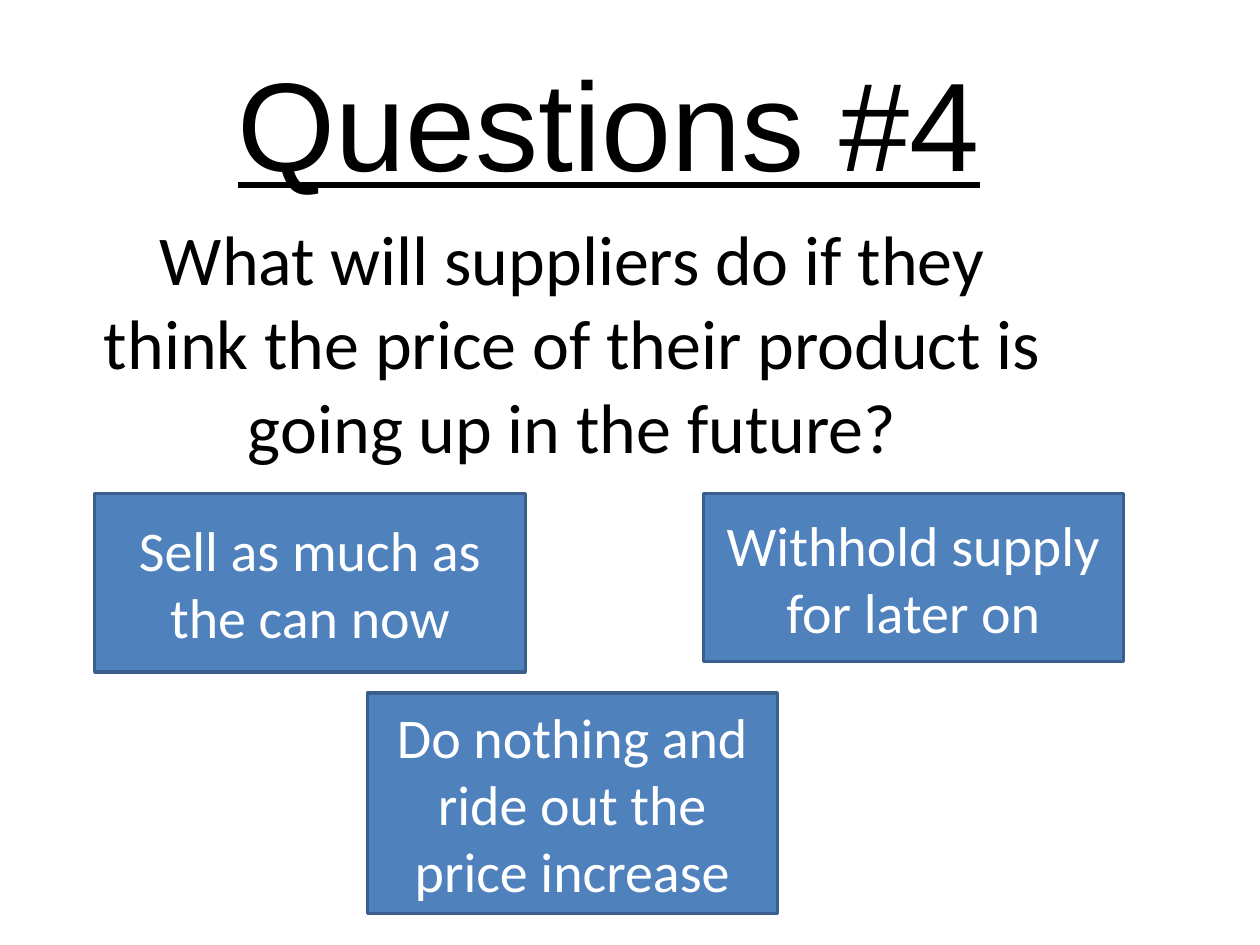
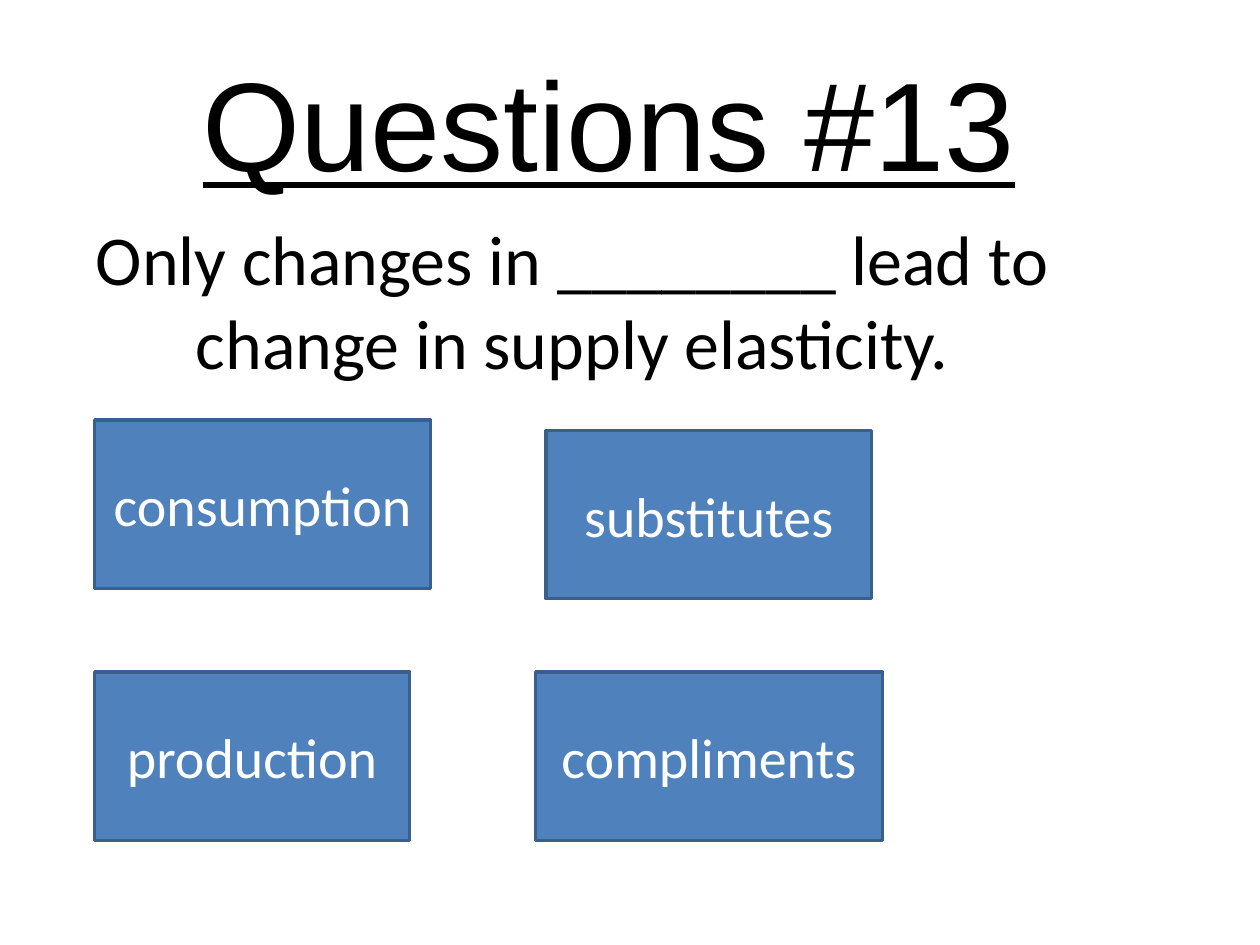
from pptx import Presentation
from pptx.dml.color import RGBColor
from pptx.enum.shapes import MSO_SHAPE
from pptx.enum.text import MSO_ANCHOR, MSO_AUTO_SIZE, PP_ALIGN
from pptx.util import Cm, Pt

COLORS = {
    "text": "000000",
    "button": "4F81BD",
    "button_line": "3A5F8C",
    "button_text": "FFFFFF",
}
TITLE_FONT, BODY_FONT = "Arial", "Calibri"
TITLE_ONLY = 5
LEFT = 1.48
BUTTON_LEFT = 1.91
BUTTON_HEIGHT = 3.39
TOP_ROW, BOTTOM_ROW = 9.95, 13.55

# Each answer: text, then left, top, width and height in centimetres.
QUESTIONS = [
    {
        "title": "Questions #4",
        "question": "What will suppliers do if they think the price of their "
                    "product is going up in the future?",
        "question_height": 5.72,
        "answers": [
            ("Sell as much as the can now", BUTTON_LEFT, TOP_ROW, 8.68, 3.6),
            ("Withhold supply for later on", 14.18, TOP_ROW, 8.47, BUTTON_HEIGHT),
            ("Do nothing and ride out the price increase", 7.41, 13.97, 8.26, 4.45),
        ],
    },
    {
        "title": "Questions #13",
        "question": "Only changes in ________ lead to change in supply elasticity.",
        "question_height": 4.45,
        "answers": [
            ("consumption", BUTTON_LEFT, 8.47, 6.77, BUTTON_HEIGHT),
            ("production", BUTTON_LEFT, BOTTOM_ROW, 6.35, BUTTON_HEIGHT),
            ("substitutes", 11.01, 8.68, 6.56, BUTTON_HEIGHT),
            ("compliments", 10.8, BOTTOM_ROW, 6.99, BUTTON_HEIGHT),
        ],
    },
]


def color(name):
    return RGBColor.from_string(COLORS[name])


class QuizDeck:
    """Holds the presentation, its style and the current slide."""

    def __init__(self):
        self.presentation = Presentation()
        self.presentation.slide_width = Cm(25.4)
        self.presentation.slide_height = Cm(19.05)
        self.slide = None

    def new_slide(self):
        layout = self.presentation.slide_layouts[TITLE_ONLY]
        self.slide = self.presentation.slides.add_slide(layout)

    def set_text(self, shape, text, font_name, size, color_name, anchor):
        frame = shape.text_frame
        frame.text = text
        frame.word_wrap = True
        frame.auto_size = MSO_AUTO_SIZE.NONE
        frame.vertical_anchor = anchor
        paragraph = frame.paragraphs[0]
        paragraph.alignment = PP_ALIGN.CENTER
        paragraph.font.name = font_name
        paragraph.font.size = Pt(size)
        paragraph.font.color.rgb = color(color_name)
        return paragraph

    def title(self, text):
        title = self.slide.shapes.title
        title.left, title.top = Cm(LEFT), Cm(0.64)
        title.width, title.height = Cm(21.59), Cm(3.6)
        paragraph = self.set_text(title, text, TITLE_FONT, 72, "text", MSO_ANCHOR.MIDDLE)
        paragraph.font.underline = True

    def question(self, text, height):
        box = self.slide.shapes.add_textbox(Cm(LEFT), Cm(4.23), Cm(20.11), Cm(height))
        self.set_text(box, text, BODY_FONT, 40, "text", MSO_ANCHOR.TOP)

    def answer_button(self, text, left, top, width, height):
        button = self.slide.shapes.add_shape(
            MSO_SHAPE.ACTION_BUTTON_CUSTOM, Cm(left), Cm(top), Cm(width), Cm(height))
        button.shadow.inherit = False
        button.fill.solid()
        button.fill.fore_color.rgb = color("button")
        button.line.color.rgb = color("button_line")
        button.line.width = Pt(2)
        self.set_text(button, text, BODY_FONT, 32, "button_text", MSO_ANCHOR.MIDDLE)


def main():
    deck = QuizDeck()
    for item in QUESTIONS:
        deck.new_slide()
        deck.title(item["title"])
        deck.question(item["question"], item["question_height"])
        for answer in item["answers"]:
            deck.answer_button(*answer)
    deck.presentation.save("out.pptx")


if __name__ == "__main__":
    main()
